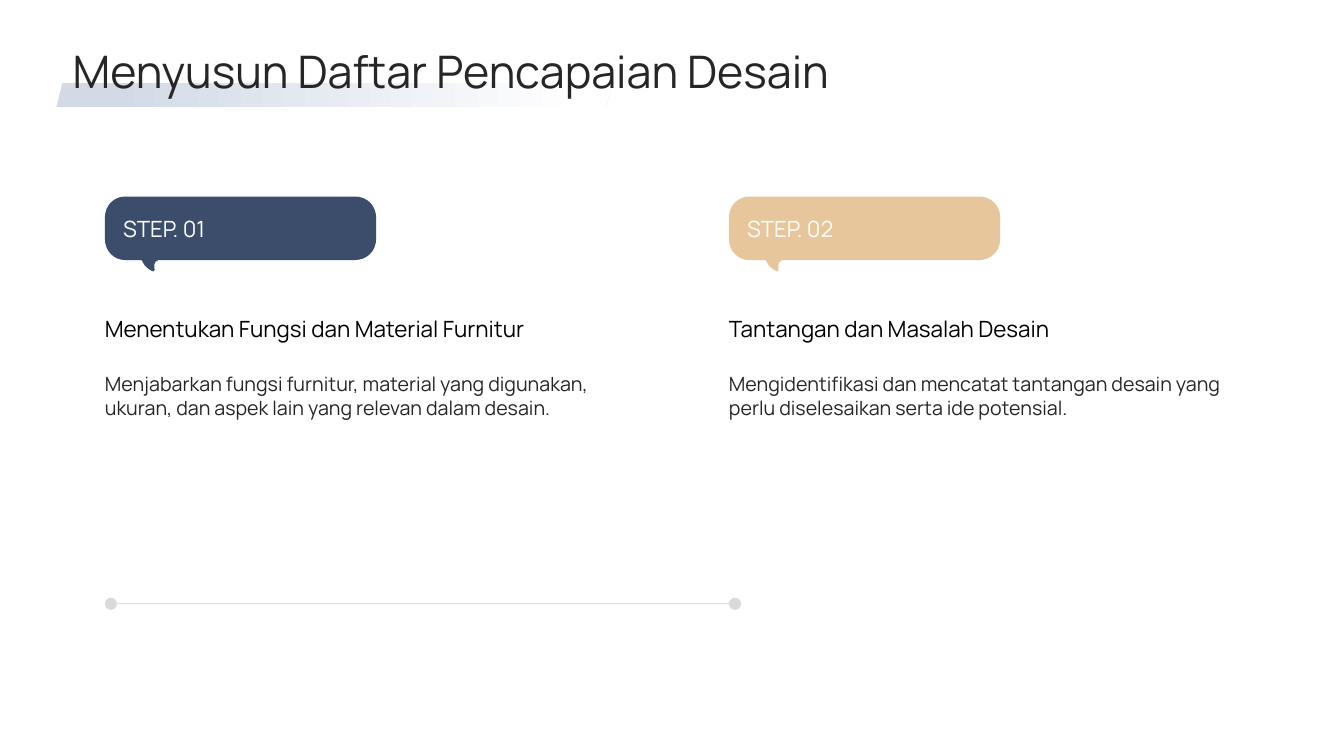
from pptx import Presentation
from pptx.dml.color import RGBColor
from pptx.enum.shapes import MSO_CONNECTOR, MSO_SHAPE
from pptx.enum.text import MSO_ANCHOR
from pptx.oxml.ns import qn
from pptx.util import Inches, Pt
from lxml import etree

TOP, MIDDLE = MSO_ANCHOR.TOP, MSO_ANCHOR.MIDDLE
TITLE = "Menyusun Daftar Pencapaian Desain"
STEPS = [
    ("STEP. 01", "navy", "Menentukan Fungsi dan Material Furnitur",
     "Menjabarkan fungsi furnitur, material yang digunakan, ukuran, dan aspek lain "
     "yang relevan dalam desain."),
    ("STEP. 02", "sand", "Tantangan dan Masalah Desain",
     "Mengidentifikasi dan mencatat tantangan desain yang perlu diselesaikan "
     "serta ide potensial."),
]
COLORS = {"navy": "3C4C6B", "sand": "E6C69A", "white": "FFFFFF", "black": "000000",
          "ink": "262626", "gray": "D9D9D9", "mist": "D3DAE6"}
FONT = "Manrope"
LEFT, COLUMN_STEP, COLUMN_WIDTH = 1.04, 6.19, 5.08
BUBBLE_TOP, BUBBLE_INSET = 1.95, 0.18
TIMELINE_Y, DOT = 5.99, 0.12
BUBBLE_START = (0.2, 0.63)
BUBBLE_OUTLINE = [
    [(0.35, 0.63)],
    [(0.36, 0.63), (0.37, 0.63), (0.37, 0.64)],
    [(0.39, 0.69), (0.43, 0.72), (0.47, 0.74)],
    [(0.48, 0.75), (0.49, 0.74), (0.49, 0.73)],
    [(0.5, 0.73), (0.5, 0.72), (0.49, 0.72)],
    [(0.49, 0.69), (0.48, 0.65), (0.53, 0.63)],
    [(0.53, 0.63), (0.54, 0.63), (0.54, 0.63)],
    [(2.48, 0.63)],
    [(2.6, 0.63), (2.69, 0.54), (2.69, 0.42)],
    [(2.69, 0.21)],
    [(2.69, 0.09), (2.6, 0), (2.48, 0)],
    [(0.2, 0)],
    [(0.09, 0), (0, 0.09), (0, 0.21)],
    [(0, 0.42)],
    [(0, 0.54), (0.09, 0.63), (0.2, 0.63)],
]


def rgb(name):
    return RGBColor.from_string(COLORS[name])


def finish(shape, color):
    shape.shadow.inherit = False
    shape.line.fill.background()
    shape.fill.solid()
    shape.fill.fore_color.rgb = rgb(color)


def add_text(page, text, left, top, width, height, size, color, anchor=MIDDLE):
    box = page.shapes.add_textbox(Inches(left), Inches(top), Inches(width), Inches(height))
    frame = box.text_frame
    frame.word_wrap = True
    frame.vertical_anchor = anchor
    frame.margin_left = frame.margin_right = frame.margin_top = frame.margin_bottom = 0
    span = frame.paragraphs[0].add_run()
    span.text = text
    span.font.name = FONT
    span.font.size = Pt(size)
    span.font.color.rgb = rgb(color)


def bend_outline(bubble):
    sides = list(bubble._element.iter(qn("a:lnTo")))
    for side, segment in zip(sides, BUBBLE_OUTLINE):
        if len(segment) == 3:
            curve = etree.Element(qn("a:cubicBezTo"))
            for x, y in segment:
                etree.SubElement(curve, qn("a:pt"), x=str(Inches(x)), y=str(Inches(y)))
            side.getparent().replace(side, curve)


def add_bubble(page, left, color):
    corners = [BUBBLE_START] + [segment[-1] for segment in BUBBLE_OUTLINE]
    placed = [(Inches(left + x), Inches(BUBBLE_TOP + y)) for x, y in corners]
    builder = page.shapes.build_freeform(*placed[0])
    builder.add_line_segments(placed[1:], close=True)
    bubble = builder.convert_to_shape()
    bend_outline(bubble)
    finish(bubble, color)


def add_step(page, left, label, color, heading, body):
    add_bubble(page, left, color)
    add_text(page, label, left + BUBBLE_INSET, 2.08, 2.32, 0.37, 16, "white")
    add_text(page, heading, left, 2.82, COLUMN_WIDTH, 0.87, 16, "black")
    add_text(page, body, left, 3.69, COLUMN_WIDTH, 1.57, 14, "ink", TOP)


def add_timeline(page, lefts):
    start, end = Inches(lefts[0] + 0.02), Inches(lefts[-1] + 0.05)
    y = Inches(TIMELINE_Y)
    line = page.shapes.add_connector(MSO_CONNECTOR.STRAIGHT, start, y, end, y)
    line.line.color.rgb = rgb("gray")
    line.line.width = Pt(1)
    etree.SubElement(line._element.spPr, qn("a:effectLst"))
    for left in reversed(lefts):
        dot = page.shapes.add_shape(MSO_SHAPE.OVAL, Inches(left), Inches(TIMELINE_Y - DOT / 2),
                                    Inches(DOT), Inches(DOT))
        finish(dot, "gray")


def add_title(page):
    band = page.shapes.add_shape(MSO_SHAPE.PARALLELOGRAM, Inches(0.56), Inches(0.82),
                                 Inches(5.51), Inches(0.24))
    finish(band, "mist")
    band.fill.gradient()
    band.fill.gradient_angle = 0
    for stop, position, color in zip(band.fill.gradient_stops, (0.1, 0.95), ("mist", "white")):
        stop.position = position
        stop.color.rgb = rgb(color)
    add_text(page, TITLE, 0.72, 0.47, 11.88, 0.47, 32, "ink")


def main():
    deck = Presentation()
    deck.slide_width, deck.slide_height = Inches(13.33), Inches(7.5)
    page = deck.slides.add_slide(deck.slide_layouts[6])
    lefts = [LEFT + index * COLUMN_STEP for index in range(len(STEPS))]
    for left, step in zip(lefts, STEPS):
        add_step(page, left, *step)
    add_timeline(page, lefts)
    add_title(page)
    deck.save("out.pptx")


if __name__ == "__main__":
    main()
